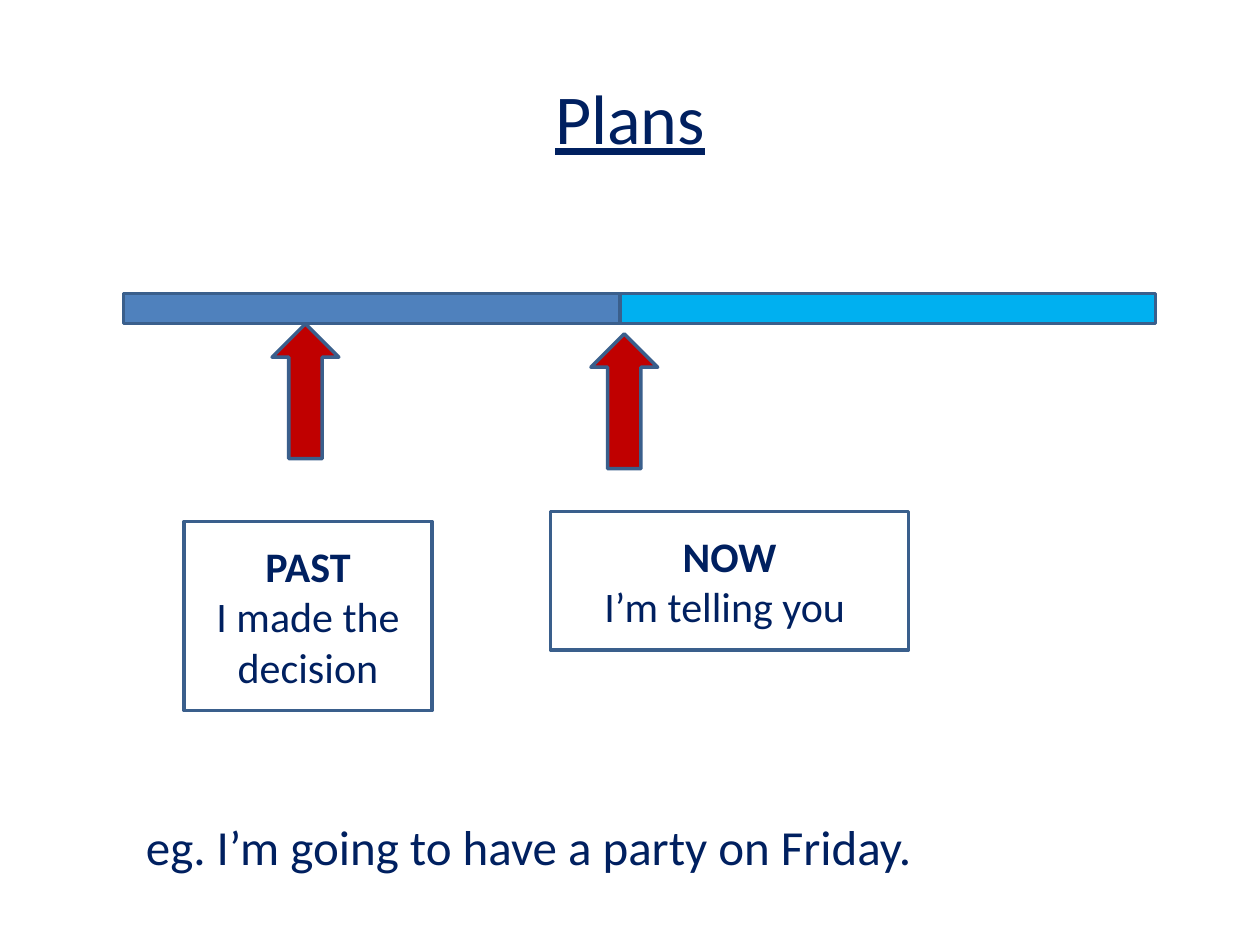
from pptx import Presentation
from pptx.dml.color import RGBColor
from pptx.enum.shapes import MSO_SHAPE
from pptx.enum.text import MSO_ANCHOR, MSO_AUTO_SIZE, PP_ALIGN
from pptx.util import Inches, Pt

RECT, UP_ARROW = MSO_SHAPE.RECTANGLE, MSO_SHAPE.UP_ARROW
LEFT, CENTER = PP_ALIGN.LEFT, PP_ALIGN.CENTER
MIDDLE = MSO_ANCHOR.MIDDLE
GROW = MSO_AUTO_SIZE.SHAPE_TO_FIT_TEXT

COLORS = {
    "text": "002060",
    "outline": "3A5F8C",
    "past": "4F81BD",
    "future": "00B0F0",
    "arrow": "C00000",
    "white": "FFFFFF",
}


class TimelineSlide:
    font = "Calibri"
    line_width = Pt(2)

    def __init__(self, prs):
        self.slide = prs.slides.add_slide(prs.slide_layouts[5])

    def color(self, name):
        return RGBColor.from_string(COLORS[name])

    def add_text(self, p, text, size, align, bold=False, underline=False):
        p.alignment = align
        r = p.add_run()
        r.text = text
        r.font.name = self.font
        r.font.size = Pt(size)
        r.font.bold = bold
        r.font.underline = underline
        r.font.color.rgb = self.color("text")

    def title(self, text, left, top, width, height):
        s = self.slide.shapes.title
        s.left, s.top = Inches(left), Inches(top)
        s.width, s.height = Inches(width), Inches(height)
        tf = s.text_frame
        tf.vertical_anchor = MIDDLE
        self.add_text(tf.paragraphs[0], text, 40, CENTER, underline=True)

    def shape(self, kind, fill, left, top, width, height):
        s = self.slide.shapes.add_shape(
            kind, Inches(left), Inches(top), Inches(width), Inches(height))
        s.shadow.inherit = False
        s.fill.solid()
        s.fill.fore_color.rgb = self.color(fill)
        s.line.color.rgb = self.color("outline")
        s.line.width = self.line_width
        return s

    def bar(self, fill, left, width):
        self.shape(RECT, fill, left, 2.33, width, 0.24)

    def arrow(self, left, top):
        self.shape(UP_ARROW, "arrow", left, top, 0.53, 1.07)

    def label(self, heading, text, left, top, width, height):
        tf = self.shape(RECT, "white", left, top, width, height).text_frame
        tf.word_wrap = True
        tf.vertical_anchor = MIDDLE
        self.add_text(tf.paragraphs[0], heading, 24, CENTER, bold=True)
        self.add_text(tf.add_paragraph(), text, 24, CENTER)

    def example(self, text, left, top, width, height):
        s = self.slide.shapes.add_textbox(
            Inches(left), Inches(top), Inches(width), Inches(height))
        tf = s.text_frame
        tf.word_wrap = True
        tf.auto_size = GROW
        self.add_text(tf.paragraphs[0], text, 28, LEFT)


def main():
    prs = Presentation()
    prs.slide_width, prs.slide_height = Inches(10), Inches(7.5)

    plans = TimelineSlide(prs)
    plans.title("Plans", 0.5, 0.3, 9, 1.25)
    plans.bar("past", 0.98, 3.94)
    plans.bar("future", 4.92, 4.25)
    plans.arrow(4.69, 2.65)
    plans.arrow(2.16, 2.57)
    plans.label("PAST", "I made the decision", 1.46, 4.14, 1.97, 1.5)
    plans.label("NOW", "I’m telling you ", 4.37, 4.06, 2.84, 1.1)
    plans.example("eg. I’m going to have a party on Friday.", 1.06, 6.43, 8.19, 0.57)

    prs.save("out.pptx")


if __name__ == "__main__":
    main()
